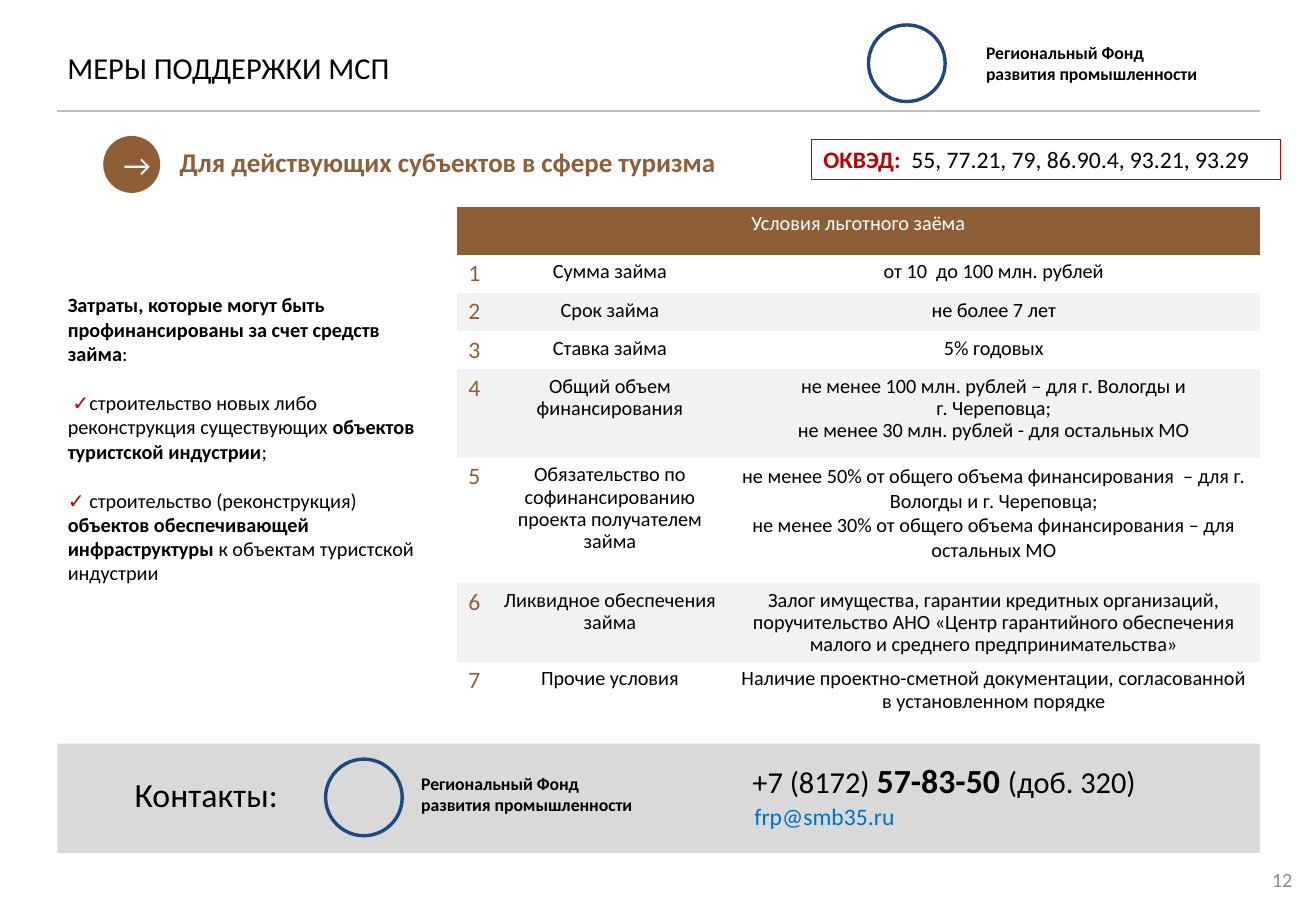
from lxml import etree
from pptx import Presentation
from pptx.dml.color import RGBColor
from pptx.enum.shapes import MSO_CONNECTOR, MSO_SHAPE
from pptx.enum.text import MSO_ANCHOR, MSO_AUTO_SIZE, PP_ALIGN
from pptx.oxml.ns import qn
from pptx.util import Pt

LEFT, CENTER, RIGHT = PP_ALIGN.LEFT, PP_ALIGN.CENTER, PP_ALIGN.RIGHT
TOP, MIDDLE = MSO_ANCHOR.TOP, MSO_ANCHOR.MIDDLE
NO_AUTOFIT = MSO_AUTO_SIZE.NONE
RECTANGLE, OVAL = MSO_SHAPE.RECTANGLE, MSO_SHAPE.OVAL
STRAIGHT = MSO_CONNECTOR.STRAIGHT
PLAIN_TABLE_STYLE = "{2D5ABB26-0587-4C30-8999-92F81FD0307C}"

BROWN, RED, BLUE, NAVY = "8E5E36", "C00000", "0070C0", "1F497D"
BLACK, WHITE, GRAY, NUMBER_GRAY = "000000", "FFFFFF", "D9D9D9", "8B8B8B"
RULE_GRAY, BAND_GRAY = "BFBFBF", "F2F2F2"
BOLD = {"bold": True}
CHECK = ("✓", {"color": RED})

FUND_NAME = ["Региональный Фонд", "развития промышленности"]
LOAN_TERMS = [
    ("Сумма займа", ["от 10  до 100 млн. рублей"], 22.6),
    ("Срок займа", ["не более 7 лет"], 22.6),
    ("Ставка займа", ["5% годовых"], 22.6),
    ("Общий объем финансирования",
     ["не менее 100 млн. рублей – для г. Вологды и", "г. Череповца;",
      "не менее 30 млн. рублей - для остальных МО"], 52.6),
    ("Обязательство по софинансированию проекта получателем займа",
     ["не менее 50% от общего объема финансирования  – для г. Вологды и г. Череповца;",
      "не менее 30% от общего объема финансирования – для остальных МО"], 74.2),
    ("Ликвидное обеспечения займа",
     ["Залог имущества, гарантии кредитных организаций, поручительство АНО "
      "«Центр гарантийного обеспечения малого и среднего предпринимательства»"], 46),
    ("Прочие условия",
     ["Наличие проектно-сметной документации, согласованной в установленном порядке"], 37.4),
]
COSTS = [
    [("Затраты, которые могут быть профинансированы за счет средств займа", BOLD), ":"],
    [" ", CHECK, "строительство новых либо реконструкция существующих ",
     ("объектов туристской индустрии", BOLD), ";"],
    [CHECK, " строительство (реконструкция) ",
     ("объектов обеспечивающей инфраструктуры ", BOLD), "к объектам туристской индустрии"],
]


def rgb(value):
    return RGBColor.from_string(value)


class SlideBuilder:
    def __init__(self, presentation, font_name):
        self.font_name = font_name
        self.slide = presentation.slides.add_slide(presentation.slide_layouts[5])

    def style_font(self, font, values):
        for name, value in {"name": self.font_name, **values}.items():
            if name == "color":
                font.color.rgb = rgb(value)
            else:
                setattr(font, name, Pt(value) if name == "size" else value)

    def add_paragraphs(self, frame, paragraphs, size, color=BLACK, bold=False,
                       align=LEFT, spacing=1.0, gap=0):
        for index, runs in enumerate(paragraphs):
            paragraph = frame.add_paragraph() if index else frame.paragraphs[0]
            paragraph.alignment = align
            paragraph.line_spacing = spacing
            paragraph.space_before = Pt(gap if index else 0)
            for item in [runs] if isinstance(runs, str) else runs:
                text, extra = (item, {}) if isinstance(item, str) else item
                run = paragraph.add_run()
                run.text = text
                self.style_font(run.font, {"size": size, "color": color, "bold": bold, **extra})

    def prepare_frame(self, frame, anchor, inset=7.2):
        values = {"word_wrap": True, "auto_size": NO_AUTOFIT, "vertical_anchor": anchor,
                  "margin_left": Pt(inset), "margin_right": Pt(inset),
                  "margin_top": Pt(inset / 2), "margin_bottom": Pt(inset / 2)}
        for name, value in values.items():
            setattr(frame, name, value)

    def title(self, box, text, size):
        shape = self.slide.shapes.title
        for name, value in zip(("left", "top", "width", "height"), box):
            setattr(shape, name, Pt(value))
        self.prepare_frame(shape.text_frame, MIDDLE, 6)
        self.add_paragraphs(shape.text_frame, [text], size)

    def text(self, box, paragraphs, size, anchor=MIDDLE, inset=7.2, **style):
        shape = self.slide.shapes.add_textbox(*map(Pt, box))
        self.prepare_frame(shape.text_frame, anchor, inset)
        self.add_paragraphs(shape.text_frame, paragraphs, size, **style)

    def shape(self, kind, box, fill=None, line=None, line_width=0):
        shape = self.slide.shapes.add_shape(kind, *map(Pt, box))
        shape.shadow.inherit = False
        if fill:
            shape.fill.solid()
            shape.fill.fore_color.rgb = rgb(fill)
        else:
            shape.fill.background()
        if line:
            shape.line.color.rgb = rgb(line)
            shape.line.width = Pt(line_width)
        else:
            shape.line.fill.background()
        return shape

    def label_shape(self, shape, paragraphs, size, anchor, **style):
        self.prepare_frame(shape.text_frame, anchor)
        self.add_paragraphs(shape.text_frame, paragraphs, size, **style)

    def rule(self, left, right, top, color, width):
        line = self.slide.shapes.add_connector(STRAIGHT, Pt(left), Pt(top), Pt(right), Pt(top))
        line.line.color.rgb = rgb(color)
        line.line.width = Pt(width)
        etree.SubElement(line._element.spPr, qn("a:effectLst"))

    def fund_mark(self, left, top):
        self.shape(OVAL, (left, top, 45.4, 45.4), line=NAVY, line_width=2)

    def fund_name(self, left, top):
        self.text((left, top, 175.7, 32.4), FUND_NAME, 10.5, bold=True)

    def cell(self, cell, paragraphs, fill, size=12, color=BLACK, spacing=0.9):
        cell.fill.solid()
        cell.fill.fore_color.rgb = rgb(fill)
        cell.margin_left = cell.margin_right = Pt(6.5)
        cell.margin_top = cell.margin_bottom = Pt(3.6)
        self.add_paragraphs(cell.text_frame, paragraphs, size, color,
                            align=CENTER, spacing=spacing)

    def terms_table(self, left, top, widths, header, header_height, terms):
        heights = [header_height] + [height for _, _, height in terms]
        frame = self.slide.shapes.add_table(
            len(heights), len(widths), Pt(left), Pt(top), Pt(sum(widths)), Pt(sum(heights)))
        table = frame.table
        table._tbl.tblPr.find(qn("a:tableStyleId")).text = PLAIN_TABLE_STYLE
        for column, width in zip(table.columns, widths):
            column.width = Pt(width)
        for row, height in zip(table.rows, heights):
            row.height = Pt(height)
        table.cell(0, 0).merge(table.cell(0, len(widths) - 1))
        self.cell(table.cell(0, 0), [header], BROWN, color=WHITE)
        for number, (name, conditions, _) in enumerate(terms, 1):
            fill = WHITE if number % 2 else BAND_GRAY
            self.cell(table.cell(number, 0), [str(number)], fill, 14, BROWN)
            self.cell(table.cell(number, 1), [name], fill)
            self.cell(table.cell(number, 2), conditions, fill,
                      spacing=1.0 if number == 5 else 0.9)


def main():
    presentation = Presentation()
    presentation.slide_width, presentation.slide_height = Pt(780), Pt(540)
    builder = SlideBuilder(presentation, "Calibri")

    builder.title((34, 26, 342.7, 27.4), "МЕРЫ ПОДДЕРЖКИ МСП", 18)
    builder.rule(34, 747, 65.7, RULE_GRAY, 1.5)
    builder.fund_mark(514.8, 14.8)
    builder.fund_name(577.4, 21)

    arrow = builder.shape(OVAL, (61.2, 80.6, 33.8, 33.8), fill=BROWN)
    builder.label_shape(arrow, ["→"], 18, MIDDLE, color=WHITE, align=CENTER)
    builder.text((99.4, 85, 492.5, 25.2), ["Для действующих субъектов в сфере туризма"], 16,
                 color=BROWN, bold=True, spacing=0.8)
    codes = builder.shape(RECTANGLE, (481, 82.6, 278, 24), line=RED)
    builder.label_shape(codes, [[("ОКВЭД:  ", {"color": RED, "bold": True}),
                                 "55, 77.21, 79, 86.90.4, 93.21, 93.29"]], 14, TOP)

    builder.text((33.1, 170, 232.6, 179.3), COSTS, 12, anchor=TOP, gap=14.6)
    builder.terms_table(270.8, 122.6, [20.9, 139.7, 315.4],
                        "Условия льготного заёма", 28.6, LOAN_TERMS)

    builder.shape(RECTANGLE, (34, 440.8, 713, 64.8), fill=GRAY)
    builder.text((72.7, 455, 113, 31), ["Контакты:"], 20)
    builder.fund_mark(193, 450)
    builder.fund_name(242.6, 454.5)
    builder.text((440, 447, 299.5, 30.2),
                 [["+7 (8172) ", ("57-83-50 ", {"size": 20, "bold": True}), "(доб. 320)"]],
                 18, inset=6)
    builder.text((440, 471.6, 193, 23.8), ["frp@smb35.ru"], 14, anchor=TOP, color=BLUE)
    builder.text((591, 507, 182.2, 28.8), ["12"], 12, color=NUMBER_GRAY, align=RIGHT)
    presentation.save("out.pptx")


if __name__ == "__main__":
    main()
